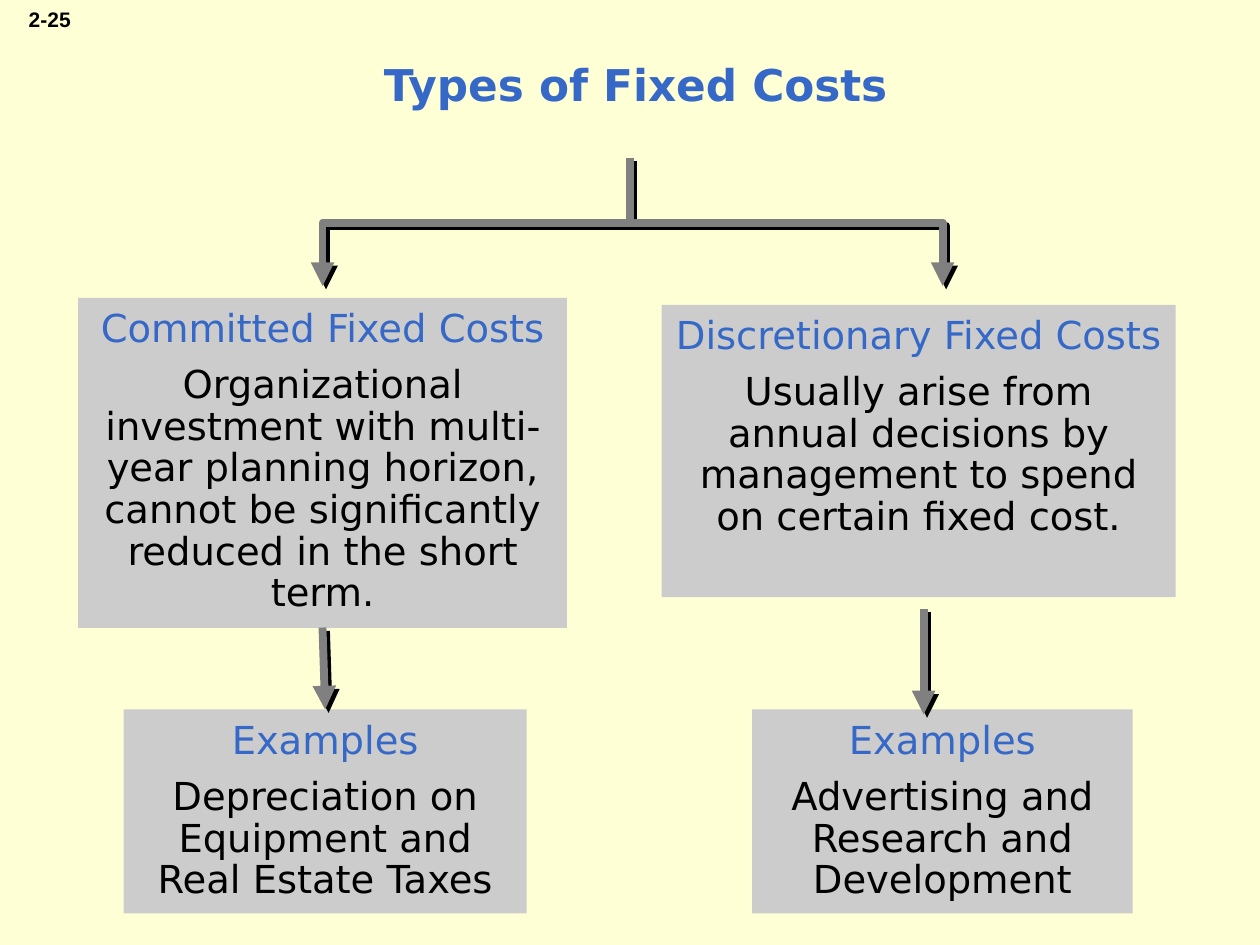
from dataclasses import dataclass

from lxml.etree import SubElement
from pptx import Presentation
from pptx.dml.color import RGBColor
from pptx.enum.shapes import MSO_CONNECTOR, MSO_SHAPE
from pptx.enum.text import MSO_ANCHOR, MSO_AUTO_SIZE, PP_ALIGN
from pptx.oxml.ns import qn
from pptx.util import Pt


@dataclass(frozen=True)
class Theme:
    background: RGBColor = RGBColor(0xFF, 0xFF, 0xD5)
    panel: RGBColor = RGBColor(0xCC, 0xCC, 0xCC)
    heading: RGBColor = RGBColor(0x35, 0x68, 0xC7)
    text: RGBColor = RGBColor(0, 0, 0)
    arrow: RGBColor = RGBColor(0x80, 0x80, 0x80)
    font: str = "DejaVu Sans"
    number_font: str = "Arial"
    title_size: int = 25
    body_size: int = 22
    number_size: int = 12
    arrow_width: float = 4.5


THEME = Theme()

# Left, top, width, height, heading, body
PANELS = [
    (429.8, 405.4, 217.4, 116.6, "Examples",
     "Advertising and Research and Development"),
    (70.6, 405.4, 230.4, 116.6, "Examples",
     "Depreciation on Equipment and Real Estate Taxes"),
    (378, 174.2, 293.8, 167, "Discretionary Fixed Costs",
     "Usually arise from annual decisions by management to spend "
     "on certain fixed cost."),
    (44.6, 170.2, 279.4, 188.6, "Committed Fixed Costs",
     "Organizational investment with multi-year planning horizon, "
     "cannot be significantly reduced in the short term."),
]
BRANCH_START = (360, 90)
BRANCH_ENDS = [(184.3, 163.4), (538.6, 163.4)]
STRAIGHT_ARROWS = [
    ((184.3, 358.6), (185.8, 405.4)),
    ((527.8, 347.8), (527.8, 408.2)),
]


def format_paragraph(para, text, size, color, font=THEME.font, bold=False,
                     align=PP_ALIGN.CENTER):
    para.text = text
    para.alignment = align
    para.font.name = font
    para.font.size = Pt(size)
    para.font.bold = bold
    para.font.color.rgb = color


def place(shape, left, top, width, height):
    shape.left, shape.top = Pt(left), Pt(top)
    shape.width, shape.height = Pt(width), Pt(height)


def add_title(page, text):
    title = page.shapes.title
    place(title, 12.2, 18, 702, 59.8)
    frame = title.text_frame
    frame.auto_size = MSO_AUTO_SIZE.NONE
    frame.vertical_anchor = MSO_ANCHOR.MIDDLE
    format_paragraph(frame.paragraphs[0], text, THEME.title_size,
                     THEME.heading, bold=True)


def add_page_number(page, text):
    box = page.shapes.add_textbox(Pt(7.9), Pt(0), Pt(39.6), Pt(21.6))
    box.text_frame.word_wrap = False
    format_paragraph(box.text_frame.paragraphs[0], text, THEME.number_size,
                     THEME.text, THEME.number_font, True, PP_ALIGN.RIGHT)


def add_panel(page, left, top, width, height, heading, body):
    box = page.shapes.add_shape(MSO_SHAPE.RECTANGLE, Pt(left), Pt(top),
                                Pt(width), Pt(height))
    box.shadow.inherit = False
    box.fill.solid()
    box.fill.fore_color.rgb = THEME.panel
    box.line.fill.background()
    frame = box.text_frame
    frame.word_wrap = True
    frame.vertical_anchor = MSO_ANCHOR.TOP
    format_paragraph(frame.paragraphs[0], heading, THEME.body_size,
                     THEME.heading)
    para = frame.add_paragraph()
    format_paragraph(para, body, THEME.body_size, THEME.text)
    para.line_spacing = 0.9
    para.space_before = Pt(0.4 * THEME.body_size)


def style_arrow(arrow):
    arrow.line.color.rgb = THEME.arrow
    arrow.line.width = Pt(THEME.arrow_width)
    SubElement(arrow.line._get_or_add_ln(), qn("a:tailEnd"), type="triangle")
    # Hard shadow, down and to the right
    effects = SubElement(arrow._element.spPr, qn("a:effectLst"))
    shadow = SubElement(effects, qn("a:outerShdw"), dist=str(Pt(2.83)),
                        dir="2700000", algn="ctr", rotWithShape="0")
    SubElement(shadow, qn("a:srgbClr"), val=str(THEME.text))


def add_straight_arrow(page, start, end):
    points = [Pt(value) for value in (*start, *end)]
    style_arrow(page.shapes.add_connector(MSO_CONNECTOR.STRAIGHT, *points))


def add_branch_arrow(page, start, end):
    """Elbow that leaves downwards: a sideways elbow turned a quarter."""
    (x1, y1), (x2, y2) = start, end
    width, height = y2 - y1, abs(x2 - x1)
    left = (x1 + x2 - width) / 2
    top = (y1 + y2 - height) / 2
    to_right = x2 > x1
    begin_x, end_x = left, left + width
    if to_right:
        begin_x, end_x = end_x, begin_x
    arrow = page.shapes.add_connector(
        MSO_CONNECTOR.ELBOW, Pt(begin_x), Pt(top), Pt(end_x), Pt(top + height))
    properties = arrow._element.spPr
    quarter_turns = 3 if to_right else 1
    properties.find(qn("a:xfrm")).set("rot", str(quarter_turns * 5400000))
    guides = properties.find(qn("a:prstGeom")).get_or_add_avLst()
    SubElement(guides, qn("a:gd"), name="adj1", fmla="val 50700")
    style_arrow(arrow)


def main():
    deck = Presentation()
    deck.slide_width, deck.slide_height = Pt(720), Pt(540)
    page = deck.slides.add_slide(deck.slide_layouts[5])
    page.background.fill.solid()
    page.background.fill.fore_color.rgb = THEME.background

    # Header
    add_page_number(page, "2-25")
    add_title(page, "Types of Fixed Costs")

    # Cost types and their examples
    for panel in PANELS:
        add_panel(page, *panel)

    # Arrows
    for end in BRANCH_ENDS:
        add_branch_arrow(page, BRANCH_START, end)
    for start, end in STRAIGHT_ARROWS:
        add_straight_arrow(page, start, end)

    deck.save("out.pptx")


if __name__ == "__main__":
    main()
